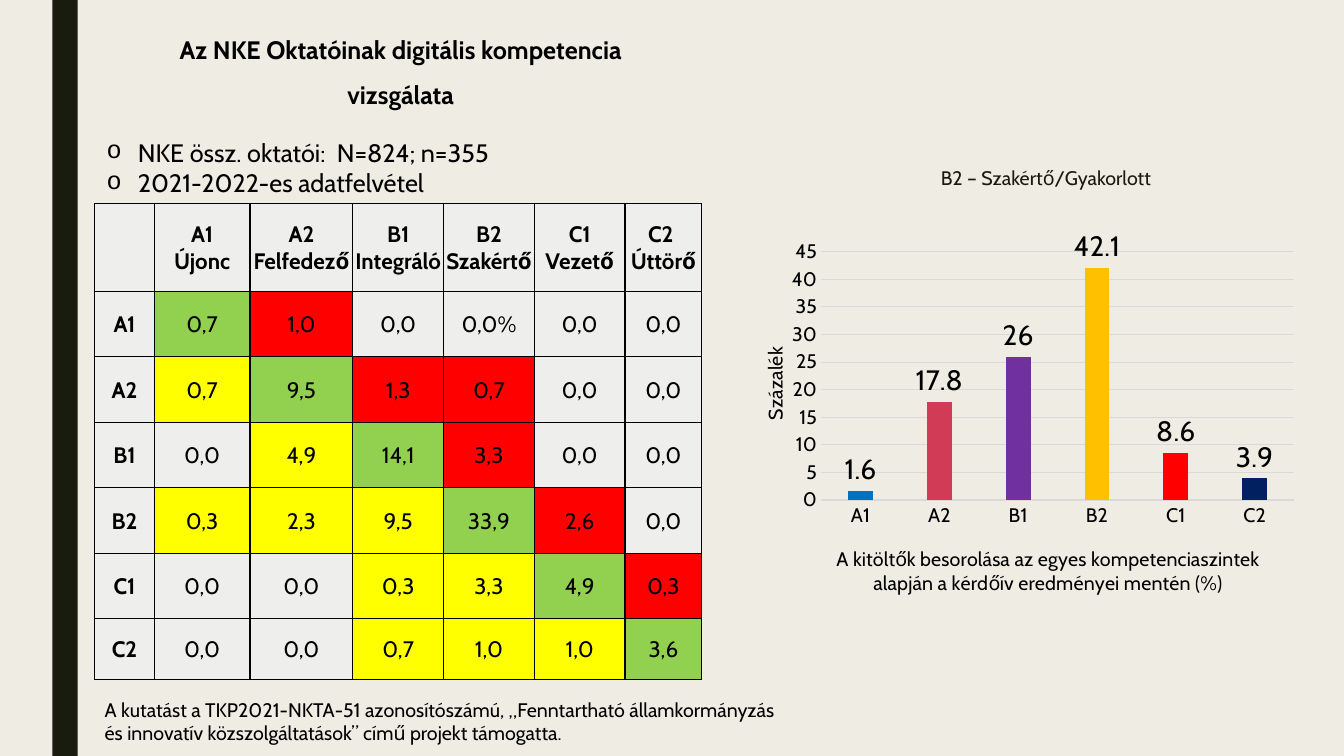
from lxml import etree
from pptx import Presentation
from pptx.chart.data import CategoryChartData
from pptx.dml.color import RGBColor
from pptx.enum import chart as chart_enum, shapes, text
from pptx.oxml import parse_xml
from pptx.oxml.ns import nsdecls, qn
from pptx.util import Inches, Pt

COLORS = {
    "background": "EFEDE3", "bar": "191B0E", "text": "000000", "grid": "D9D9D9",
    "cell": "EEEEED", "same": "92D050", "higher": "FF0000", "lower": "FFFF00",
}
FONT = "Cabin"
LEVELS = ["A1", "A2", "B1", "B2", "C1", "C2"]
HEADERS = ["", "A1\nÚjonc", "A2 Felfedező", "B1 Integráló", "B2 Szakértő",
           "C1 Vezető", "C2 \nÚttörő"]
SHARES = [
    ["0,7", "1,0", "0,0", "0,0%", "0,0", "0,0"],
    ["0,7", "9,5", "1,3", "0,7", "0,0", "0,0"],
    ["0,0", "4,9", "14,1", "3,3", "0,0", "0,0"],
    ["0,3", "2,3", "9,5", "33,9", "2,6", "0,0"],
    ["0,0", "0,0", "0,3", "3,3", "4,9", "0,3"],
    ["0,0", "0,0", "0,7", "1,0", "1,0", "3,6"],
]
COLUMN_WIDTHS = [0.59, 0.95, 1.02, 0.9, 0.9, 0.9, 0.76]
ROW_HEIGHTS = [0.87] + [0.65] * 5 + [0.6]
PERCENTAGES = [1.6, 17.8, 26, 42.1, 8.6, 3.9]
COLUMN_COLORS = ["0070C0", "D13B56", "7030A0", "FFC000", "FF0000", "002060"]


def rgb(name):
    return RGBColor.from_string(COLORS[name])


def style_font(font, size, bold=False, color="text"):
    font.name, font.size, font.bold = FONT, Pt(size), bold
    font.color.rgb = rgb(color)


def add_text(slide, box, lines, size, bold=False, color="text", align=None, spacing=None):
    frame = slide.shapes.add_textbox(*map(Inches, box)).text_frame
    frame.word_wrap = True
    frame.text = "\n".join(lines)
    for paragraph in frame.paragraphs:
        style_font(paragraph.font, size, bold, color)
        paragraph.alignment = align
        paragraph.line_spacing = spacing
    return frame


def add_bullets(slide, box, lines):
    frame = add_text(slide, box, lines, 18, align=text.PP_ALIGN.JUSTIFY)
    for paragraph in frame.paragraphs:
        properties = paragraph._p.get_or_add_pPr()
        properties.set("marL", str(Inches(0.31)))
        properties.set("indent", str(-Inches(0.31)))
        etree.SubElement(properties, qn("a:buFont"), typeface="Courier New")
        etree.SubElement(properties, qn("a:buChar"), char="o")


def add_side_bar(slide, box):
    bar = slide.shapes.add_shape(shapes.MSO_SHAPE.RECTANGLE, *map(Inches, box))
    bar.shadow.inherit = False
    bar.fill.solid()
    bar.fill.fore_color.rgb = rgb("bar")
    bar.line.fill.background()


def share_color(row, column):
    """Colour a share by its side of the diagonal; zero shares stay plain."""
    if row == 0 or column == 0 or SHARES[row - 1][column - 1].startswith("0,0"):
        return "cell"
    if row == column:
        return "same"
    return "higher" if column > row else "lower"


def style_cell(cell, fill, bold):
    cell.margin_left = cell.margin_right = cell.margin_top = Inches(0.01)
    cell.margin_bottom = 0
    cell.vertical_anchor = text.MSO_ANCHOR.MIDDLE
    for paragraph in cell.text_frame.paragraphs:
        paragraph.alignment = text.PP_ALIGN.CENTER
        style_font(paragraph.font, 16, bold)
    properties = cell._tc.get_or_add_tcPr()
    for side in ("lnL", "lnR", "lnT", "lnB"):
        properties.append(parse_xml(
            f'<a:{side} {nsdecls("a")} w="12700"><a:solidFill>'
            f'<a:srgbClr val="{COLORS["text"]}"/></a:solidFill></a:{side}>'))
    cell.fill.solid()
    cell.fill.fore_color.rgb = rgb(fill)


def add_share_table(slide, box):
    rows = [HEADERS] + [[level] + shares for level, shares in zip(LEVELS, SHARES)]
    table = slide.shapes.add_table(len(rows), len(HEADERS), *map(Inches, box)).table
    table.first_row = table.horz_banding = False
    for column, width in zip(table.columns, COLUMN_WIDTHS):
        column.width = Inches(width)
    for row, height in zip(table.rows, ROW_HEIGHTS):
        row.height = Inches(height)
    for r, values in enumerate(rows):
        for c, value in enumerate(values):
            cell = table.cell(r, c)
            cell.text = value
            style_cell(cell, share_color(r, c), bold=r == 0 or c == 0)


def manual_layout(**fractions):
    """Build a chart layout from fractions of the chart area."""
    target = '<c:layoutTarget val="inner"/>' if "w" in fractions else ""
    modes = "".join(f'<c:{key}Mode val="edge"/>' for key in "xy")
    values = "".join(f'<c:{key} val="{value}"/>' for key, value in fractions.items())
    return parse_xml(f'<c:layout {nsdecls("c")}><c:manualLayout>{target}{modes}{values}'
                     '</c:manualLayout></c:layout>')


def set_layout(element, following, layout):
    for old in element.findall(qn("c:layout")):
        element.remove(old)
    element.find(qn(following)).addprevious(layout)


def style_axis(axis, title, x, y):
    frame = axis.axis_title.text_frame
    frame.text = title
    style_font(frame.paragraphs[0].font, 14)
    set_layout(axis.axis_title._element, "c:overlay", manual_layout(x=x, y=y))
    style_font(axis.tick_labels.font, 14)
    axis.major_tick_mark = axis.minor_tick_mark = chart_enum.XL_TICK_MARK.NONE


def add_level_chart(slide, box):
    data = CategoryChartData()
    data.categories = LEVELS
    data.add_series("Series 1", PERCENTAGES)
    chart = slide.shapes.add_chart(
        chart_enum.XL_CHART_TYPE.COLUMN_CLUSTERED, *map(Inches, box), data).chart
    chart.has_legend = chart.has_title = False
    style_font(chart.font, 10)

    plot = chart.plots[0]
    plot.vary_by_categories = False
    plot.gap_width, plot.overlap = 219, -27
    for index, color in enumerate(COLUMN_COLORS):
        fill = plot.series[0].points[index].format.fill
        fill.solid()
        fill.fore_color.rgb = RGBColor.from_string(color)
    labels = plot.series[0].data_labels
    labels.show_value = True
    labels.position = chart_enum.XL_LABEL_POSITION.OUTSIDE_END
    style_font(labels.font, 20)

    levels, percent = chart.category_axis, chart.value_axis
    style_axis(levels, "A kitöltők besorolása az egyes kompetenciaszintek "
               "alapján a kérdőív eredményei mentén (%)", 0.18, 0.82)
    style_axis(percent, "Százalék", 0.05, 0.3)
    percent.minimum_scale, percent.maximum_scale, percent.major_unit = 0, 45, 5
    percent.format.line.fill.background()
    for line in (levels.format.line, percent.major_gridlines.format.line):
        line.color.rgb = rgb("grid")
        line.width = Pt(0.75)
    set_layout(plot._element.getparent(), "c:barChart",
               manual_layout(x=0.16, y=0.06, w=0.82, h=0.65))


def build_slide(presentation):
    slide = presentation.slides.add_slide(presentation.slide_layouts[6])
    slide.background.fill.solid()
    slide.background.fill.fore_color.rgb = rgb("background")
    center = text.PP_ALIGN.CENTER
    add_side_bar(slide, (0.52, 0, 0.25, 7.5))
    add_level_chart(slide, (7.23, 2.27, 5.72, 3.79))
    add_share_table(slide, (0.94, 2.02, 6.02, 4.72))
    add_bullets(slide, (0.96, 1.31, 6.16, 0.71),
                ["NKE össz. oktatói:  N=824; n=355", "2021-2022-es adatfelvétel"])
    add_text(slide, (7.41, 1.48, 5.93, 0.94), ["B2 – Szakértő/Gyakorlott"], 14,
             color="bar", align=center, spacing=1.5)
    add_text(slide, (1.61, 0.14, 4.73, 1.01),
             ["Az NKE Oktatóinak digitális kompetencia vizsgálata"], 18,
             bold=True, align=center, spacing=1.5)
    add_text(slide, (0.94, 6.87, 7.03, 0.57),
             ["A kutatást a TKP2021-NKTA-51 azonosítószámú, „Fenntartható államkormányzás "
              "és innovatív közszolgáltatások” című projekt támogatta."], 14)


def main():
    presentation = Presentation()
    presentation.slide_width, presentation.slide_height = Inches(13.33), Inches(7.5)
    build_slide(presentation)
    presentation.save("out.pptx")


if __name__ == "__main__":
    main()
